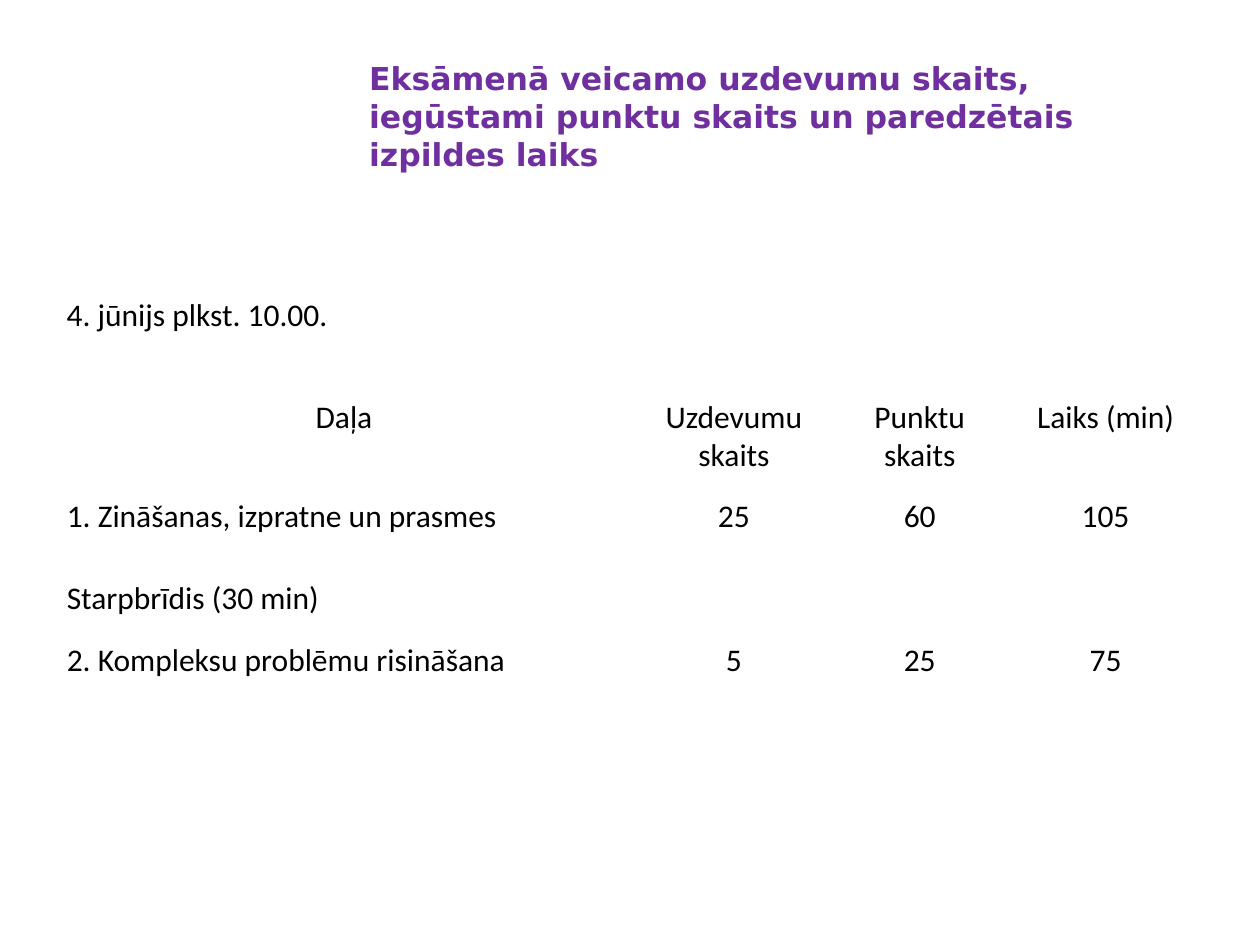
from pptx import Presentation
from pptx.dml.color import RGBColor
from pptx.enum.text import MSO_ANCHOR as Anchor, MSO_AUTO_SIZE as AutoSize, PP_ALIGN as Align
from pptx.util import Inches, Pt

COLORS = {"title": "6F2F9F", "text": "000000"}
COLUMN_WIDTHS = [4.6, 1.59, 1.36, 1.59]
ROW_HEIGHTS = [0.79, 0.65, 0.49, 0.49]
EXAM_PARTS = [
    ["Daļa", "Uzdevumu skaits", "Punktu skaits", "Laiks (min)"],
    ["1. Zināšanas, izpratne un prasmes", "25", "60", "105"],
    ["Starpbrīdis (30 min)"],
    ["2. Kompleksu problēmu risināšana", "5", "25", "75"],
]


class ExamSlide:
    """Holds the text style and the slide being built."""

    def __init__(self, slide, font="Calibri", size=18):
        self.slide = slide
        self.font = font
        self.size = size

    def add_text(self, frame, text, color="text", font=None, bold=False, align=Align.LEFT):
        paragraph = frame.paragraphs[0]
        paragraph.alignment = align
        run = paragraph.add_run()
        run.text = text
        run.font.name = font or self.font
        run.font.size = Pt(self.size)
        run.font.bold = bold
        run.font.color.rgb = RGBColor.from_string(COLORS[color])

    def title(self, text, left, top, width, height):
        heading = self.slide.shapes.title
        heading.left, heading.top = Inches(left), Inches(top)
        heading.width, heading.height = Inches(width), Inches(height)
        frame = heading.text_frame
        frame.word_wrap = True
        frame.auto_size = AutoSize.NONE
        frame.vertical_anchor = Anchor.TOP
        self.add_text(frame, text, "title", "DejaVu Sans", bold=True)

    def label(self, text, left, top, width, height):
        box = self.slide.shapes.add_textbox(
            Inches(left), Inches(top), Inches(width), Inches(height))
        box.text_frame.word_wrap = True
        box.text_frame.auto_size = AutoSize.SHAPE_TO_FIT_TEXT
        self.add_text(box.text_frame, text)

    def table(self, rows, left, top, widths, heights):
        grid = self.slide.shapes.add_table(
            len(heights), len(widths), Inches(left), Inches(top),
            Inches(sum(widths)), Inches(sum(heights))).table
        grid.first_row = grid.horz_banding = False
        for column, width in zip(grid.columns, widths):
            column.width = Inches(width)
        for row, height in zip(grid.rows, heights):
            row.height = Inches(height)
        for cell in grid.iter_cells():
            cell.fill.background()
        for r, texts in enumerate(rows):
            if len(texts) == 1:
                grid.cell(r, 0).merge(grid.cell(r, len(widths) - 1))
            for c, text in enumerate(texts):
                align = Align.CENTER if r == 0 or c > 0 else Align.LEFT
                self.add_text(grid.cell(r, c).text_frame, text, align=align)


def main():
    deck = Presentation()
    deck.slide_width, deck.slide_height = Inches(10), Inches(7.5)
    exam = ExamSlide(deck.slides.add_slide(deck.slide_layouts[5]))
    exam.title("Eksāmenā veicamo uzdevumu skaits, iegūstami punktu skaits "
               "un paredzētais izpildes laiks", 2.83, 0.42, 6.67, 1.13)
    exam.table(EXAM_PARTS, 0.43, 3.11, COLUMN_WIDTHS, ROW_HEIGHTS)
    exam.label("4. jūnijs plkst. 10.00.", 0.43, 2.29, 3.91, 0.4)
    deck.save("out.pptx")


if __name__ == "__main__":
    main()
